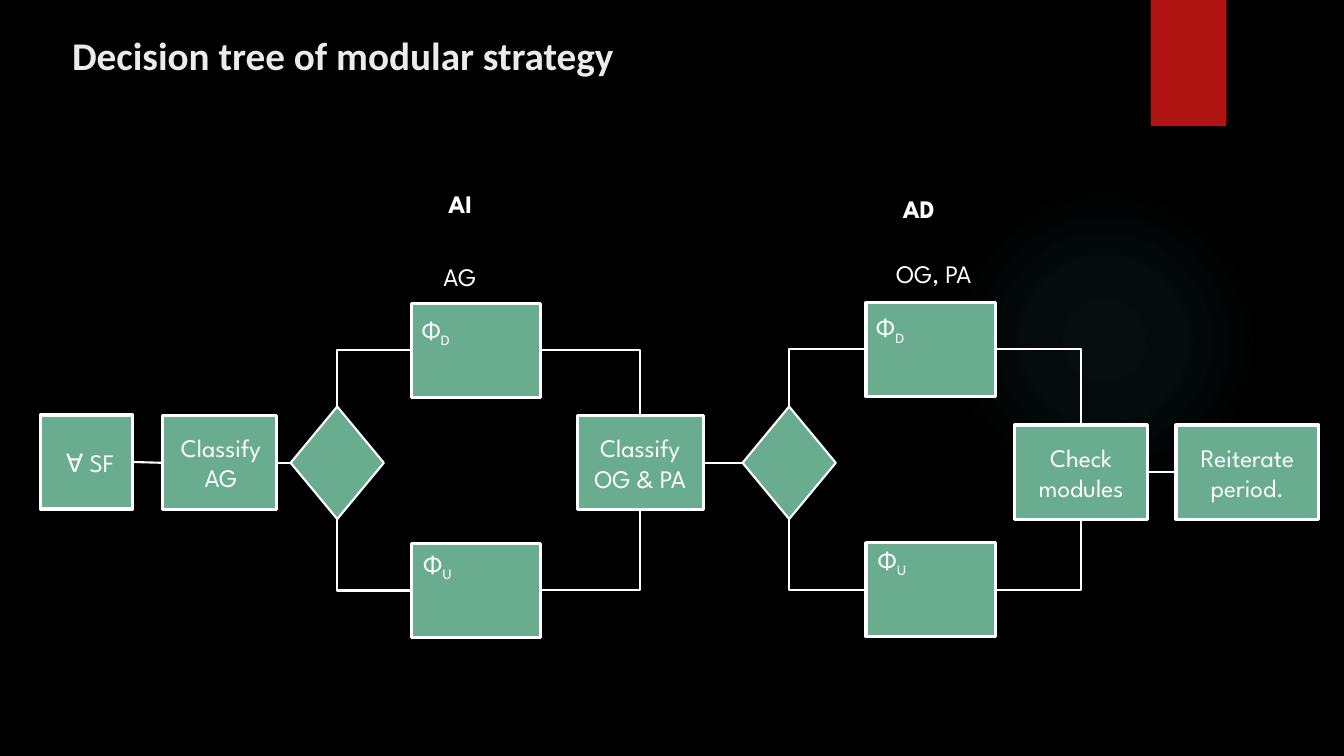
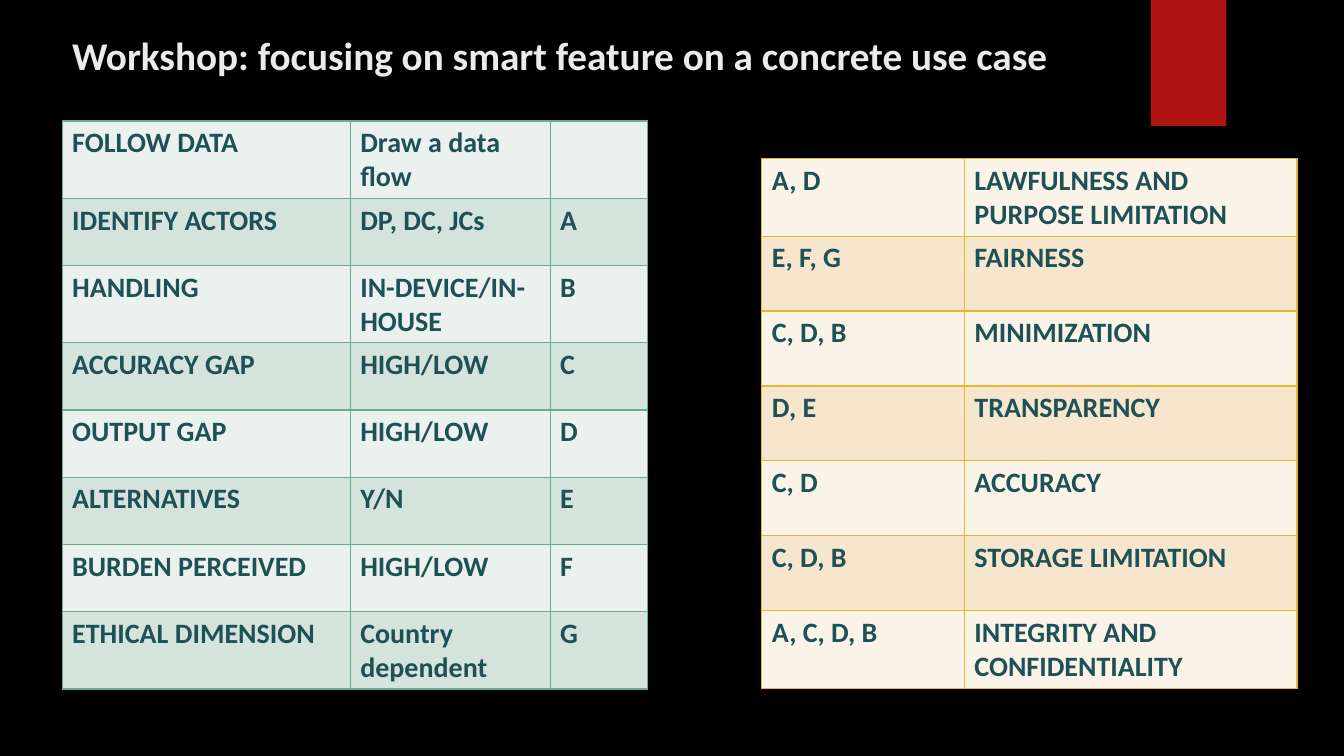
from dataclasses import dataclass

from lxml import etree
from pptx import Presentation
from pptx import util as u
from pptx.dml.color import RGBColor
from pptx.enum import shapes, text
from pptx.oxml import parse_xml
from pptx.oxml.ns import nsdecls, qn

TOP, LEFT, BOTTOM, RIGHT = range(4)


@dataclass(frozen=True)
class Theme:
    background: str = "000000"
    accent: str = "B01513"
    glow: str = "50B9C1"
    title: str = "EBEBEB"
    light: str = "FFFFFF"
    box: str = "6AAC90"
    cell_text: str = "1E5155"
    green: tuple = ("6AAC90", "EBF1EE", "D4E3DB")  # border, odd rows, even rows
    gold: tuple = ("E6B729", "FAF3E8", "F5E6CD")
    body_font: str = "Calibri"
    label_font: str = "League Spartan"
    title_size: int = 28
    cell_size: int = 20
    label_size: int = 18
    box_line: float = 2.25
    thin_line: float = 1.5
    cell_line: float = 1


def set_values(target, values):
    for name, value in values.items():
        setattr(target, name, value)


class Deck:
    """Holds the style and the current slide; lengths are grid columns and rows."""

    COLUMNS, ROWS = 160, 90

    def __init__(self, theme):
        self.theme = theme
        self.presentation = Presentation()
        self.presentation.slide_width = u.Inches(13.333)
        self.presentation.slide_height = u.Inches(7.5)
        self.slide = None

    def across(self, columns):
        return round(self.presentation.slide_width * columns / self.COLUMNS)

    def down(self, rows):
        return round(self.presentation.slide_height * rows / self.ROWS)

    def place(self, column, row, width, height):
        return (self.across(column), self.down(row),
                self.across(width), self.down(height))

    def start_slide(self, title, title_width):
        layout = self.presentation.slide_layouts[6]
        self.slide = self.presentation.slides.add_slide(layout)
        fill = self.slide.background.fill
        fill.solid()
        fill.fore_color.rgb = RGBColor.from_string(self.theme.background)
        self.glow(112.9, 22, 37)
        self.shape("RECTANGLE", 137, 0, 9, 15, self.theme.accent)
        self.label([title], 7.4, 3.1, title_width, 6.8, wrap=False,
                   size=self.theme.title_size, color=self.theme.title,
                   font=self.theme.body_font, bold=True)

    def shape(self, kind, column, row, width, height, color, line=None):
        shape = self.slide.shapes.add_shape(
            shapes.MSO_SHAPE[kind], *self.place(column, row, width, height))
        shape.shadow.inherit = False
        shape.fill.solid()
        shape.fill.fore_color.rgb = RGBColor.from_string(color)
        if line:
            self.outline(shape, line)
        else:
            shape.line.fill.background()
        return shape

    def outline(self, shape, width):
        shape.line.color.rgb = RGBColor.from_string(self.theme.light)
        shape.line.width = u.Pt(width)

    def glow(self, column, row, size):
        """A circle that fades from a faint tint to nothing."""
        ellipse = self.shape("OVAL", column, row, size, size, self.theme.glow)
        stops = "".join(
            f'<a:gs pos="{position}000"><a:srgbClr val="{self.theme.glow}">'
            f'<a:alpha val="{alpha}000"/></a:srgbClr></a:gs>'
            for position, alpha in ((0, 7), (36, 6), (69, 0)))
        gradient = parse_xml(
            f'<a:gradFill {nsdecls("a")}><a:gsLst>{stops}</a:gsLst>'
            '<a:path path="circle"><a:fillToRect l="50000" t="50000" '
            'r="50000" b="50000"/></a:path></a:gradFill>')
        properties = ellipse._element.spPr
        properties.replace(properties.find(qn("a:solidFill")), gradient)

    def add_words(self, paragraph, words, size=None, color=None, font=None,
                  bold=False, subscript=""):
        for part in filter(None, (words, subscript)):
            run = paragraph.add_run()
            run.text = part
            set_values(run.font, {
                "size": u.Pt(size or self.theme.label_size),
                "name": font or self.theme.label_font,
                "bold": bold,
            })
            run.font.color.rgb = RGBColor.from_string(color or self.theme.light)
        if subscript:
            run._r.get_or_add_rPr().set("baseline", "-25000")

    def label(self, lines, column, row, width, height=4.8, wrap=True,
              centered=False, **style):
        box = self.slide.shapes.add_textbox(*self.place(column, row, width, height))
        frame = box.text_frame
        set_values(frame, {
            "word_wrap": wrap,
            "auto_size": text.MSO_AUTO_SIZE.SHAPE_TO_FIT_TEXT,
        })
        for index, line in enumerate(lines):
            paragraph = frame.add_paragraph() if index else frame.paragraphs[0]
            if centered:
                paragraph.alignment = text.PP_ALIGN.CENTER
            self.add_words(paragraph, line, **style)

    def process(self, column, row, width, words=""):
        shape = self.shape("FLOWCHART_PROCESS", column, row, width, 11.2,
                           self.theme.box, self.theme.box_line)
        if words:
            shape.text_frame.vertical_anchor = text.MSO_ANCHOR.MIDDLE
            paragraph = shape.text_frame.paragraphs[0]
            paragraph.alignment = text.PP_ALIGN.CENTER
            self.add_words(paragraph, words)
        return shape

    def decision(self, column, row):
        return self.shape("FLOWCHART_DECISION", column, row, 11.1, 13.4,
                          self.theme.box, self.theme.thin_line)

    def connect(self, start, start_side, end, end_side, bent=False):
        connector = self.slide.shapes.add_connector(
            shapes.MSO_CONNECTOR.STRAIGHT, 0, 0, 0, 0)
        connector.begin_connect(start, start_side)
        connector.end_connect(end, end_side)
        self.outline(connector, self.theme.thin_line)
        properties = connector._element.spPr
        if bent:
            properties.find(qn("a:prstGeom")).set("prst", "bentConnector2")
        etree.SubElement(properties, qn("a:effectLst"))

    def branch(self, decision, upper, lower, target):
        """Lead a decision through two parallel boxes to the target."""
        for box, side in ((upper, TOP), (lower, BOTTOM)):
            self.connect(box, LEFT, decision, side, bent=True)
            self.connect(box, RIGHT, target, side, bent=True)

    def table(self, column, row, widths, row_height, rows, colors):
        border, *bands = colors
        frame = self.slide.shapes.add_table(
            len(rows), len(widths),
            *self.place(column, row, sum(widths), row_height * len(rows)))
        table = frame.table
        set_values(table, {"first_row": False, "horz_banding": False})
        for table_column, width in zip(table.columns, widths):
            table_column.width = self.across(width)
        for index, values in enumerate(rows):
            table.rows[index].height = self.down(row_height)
            for cell, words in zip(table.rows[index].cells, values):
                cell.fill.solid()
                cell.fill.fore_color.rgb = RGBColor.from_string(bands[index % 2])
                self.cell_border(cell, border)
                self.add_words(cell.text_frame.paragraphs[0], words,
                               size=self.theme.cell_size, bold=True,
                               color=self.theme.cell_text,
                               font=self.theme.body_font)

    def cell_border(self, cell, color):
        properties = cell._tc.get_or_add_tcPr()
        for index, side in enumerate("LRTB"):
            properties.insert(index, parse_xml(
                f'<a:ln{side} {nsdecls("a")} w="{u.Pt(self.theme.cell_line)}">'
                f'<a:solidFill><a:srgbClr val="{color}"/></a:solidFill>'
                f'</a:ln{side}>'))


def decision_tree(deck):
    deck.start_slide("Decision tree of modular strategy", 70.2)

    features = deck.process(4.8, 49.4, 11)
    classify_ag = deck.process(19.3, 49.5, 13.6)
    classify_og = deck.process(68.7, 49.5, 15, "Classify OG & PA")
    check = deck.process(120.8, 50.6, 15.8, "Check modules")
    reiterate = deck.process(140, 50.6, 17, "Reiterate period.")
    first, second = (deck.decision(column, 48.4) for column in (34.6, 88.4))

    for decision, target, column, upper_row in (
            (first, classify_og, 49, 36.1), (second, check, 103.1, 36)):
        upper, lower = (deck.process(column, row, 15.4)
                        for row in (upper_row, upper_row + 28.6))
        deck.branch(decision, upper, lower, target)

    for start, end in ((features, classify_ag), (classify_ag, first),
                       (classify_og, second), (check, reiterate)):
        deck.connect(start, RIGHT, end, LEFT)

    for column, row, subscript in ((49, 36.8, "D"), (103.1, 36.5, "D"),
                                   (49.2, 64.7, "U"), (103.3, 64.2, "U")):
        deck.label(["Φ"], column, row, 6.1, subscript=subscript,
                   font=deck.theme.body_font)
    for words, column, row, width, bold in (
            ("AI", 52.2, 21.8, 5.5, True), ("AD", 106.3, 22.4, 7, True),
            ("AG", 51.6, 30.5, 7.3, False), ("OG, PA", 105.5, 30.2, 13.4, False)):
        deck.label([words], column, row, width, wrap=False, bold=bold)
    deck.label(["∀ SF"], 6.7, 52.7, 9)
    deck.label(["Classify", "AG"], 19.8, 50.9, 13, 8.5, centered=True)


def workshop(deck):
    deck.start_slide("Workshop: focusing on smart feature on a concrete use case",
                     125.9)
    deck.table(7.4, 14.4, (34.3, 23.8, 11.6), 8, (
        ("FOLLOW DATA", "Draw a data flow", ""),
        ("IDENTIFY ACTORS", "DP, DC, JCs", "A"),
        ("HANDLING", "IN-DEVICE/IN-HOUSE", "B"),
        ("ACCURACY GAP", "HIGH/LOW", "C"),
        ("OUTPUT GAP", "HIGH/LOW", "D"),
        ("ALTERNATIVES", "Y/N", "E"),
        ("BURDEN PERCEIVED", "HIGH/LOW", "F"),
        ("ETHICAL DIMENSION", "Country dependent", "G"),
    ), deck.theme.green)
    deck.table(90.7, 18.9, (24.1, 39.6), 8.92, (
        ("A, D", "LAWFULNESS AND PURPOSE LIMITATION"),
        ("E, F, G", "FAIRNESS"),
        ("C, D, B", "MINIMIZATION"),
        ("D, E", "TRANSPARENCY"),
        ("C, D", "ACCURACY"),
        ("C, D, B", "STORAGE LIMITATION"),
        ("A, C, D, B", "INTEGRITY AND CONFIDENTIALITY"),
    ), deck.theme.gold)


def main():
    deck = Deck(Theme())
    decision_tree(deck)
    workshop(deck)
    deck.presentation.save("out.pptx")


if __name__ == "__main__":
    main()
